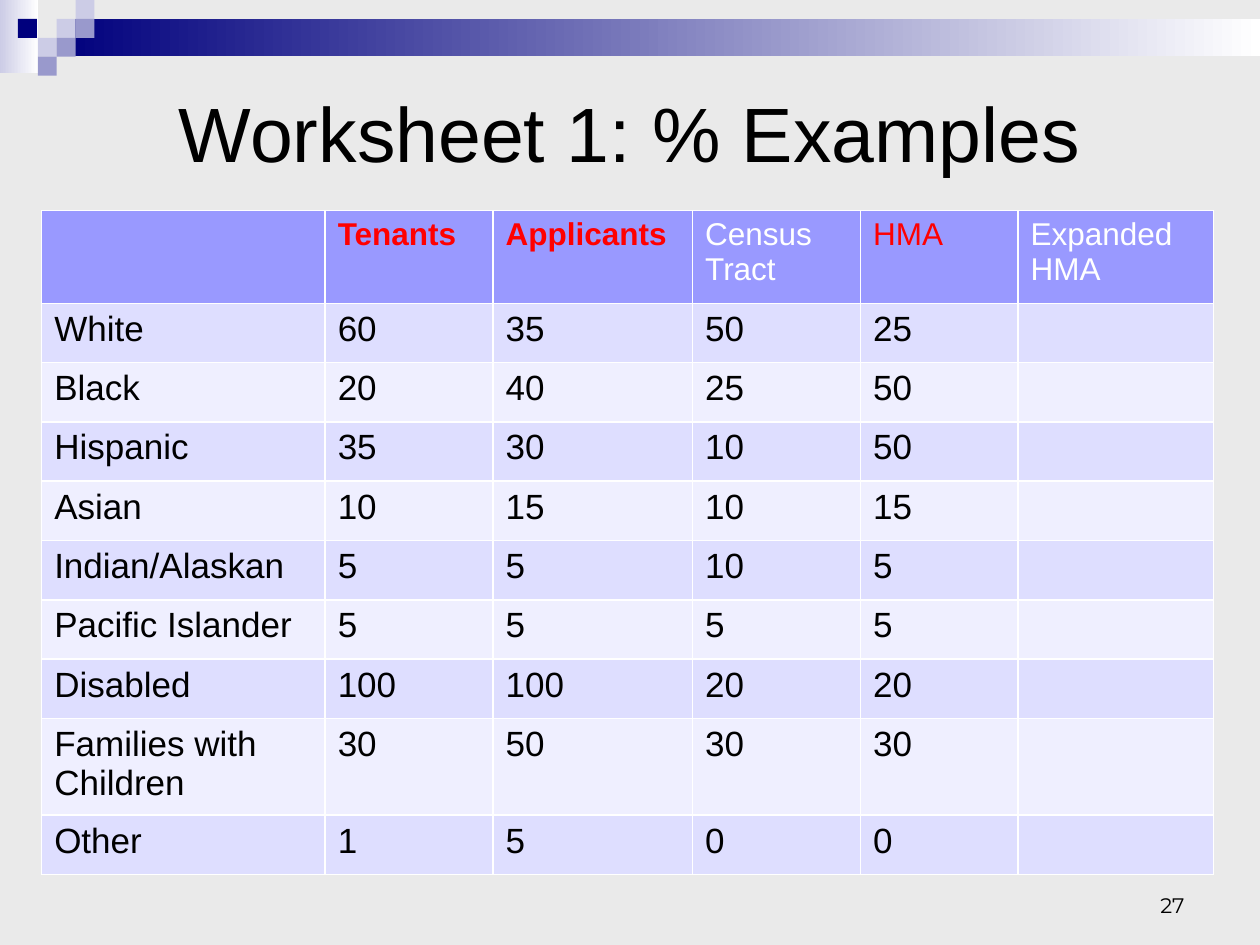
"""Build the worksheet slide with its table of percentage examples."""
from pptx import Presentation
from pptx.dml.color import RGBColor
from pptx.enum.shapes import MSO_SHAPE
from pptx.enum.text import MSO_ANCHOR, PP_ALIGN
from pptx.util import Pt

BLACK = RGBColor(0x00, 0x00, 0x00)
WHITE = RGBColor(0xFF, 0xFF, 0xFF)
RED = RGBColor(0xFF, 0x00, 0x00)
GREY = RGBColor(0xEA, 0xEA, 0xEA)
NAVY = RGBColor(0x00, 0x00, 0x7D)
MAUVE = RGBColor(0x99, 0x99, 0xCC)
PALE = RGBColor(0xCC, 0xCC, 0xE6)
HEAD = RGBColor(0x99, 0x99, 0xFF)
ODD = RGBColor(0xDE, 0xDE, 0xFF)
EVEN = RGBColor(0xEF, 0xEF, 0xFF)


def write(frame, text, size=20, color=BLACK, bold=False, font="Arial",
          align=PP_ALIGN.LEFT, anchor=MSO_ANCHOR.TOP):
    frame.word_wrap = True
    frame.vertical_anchor = anchor
    para = frame.paragraphs[0]
    para.alignment = align
    run = para.add_run()
    run.text = text
    run.font.size = Pt(size)
    run.font.name = font
    run.font.bold = bold
    run.font.color.rgb = color


def block(left, top, width, height, color, fade=False):
    shape = slide.shapes.add_shape(
        MSO_SHAPE.RECTANGLE, Pt(left), Pt(top), Pt(width), Pt(height))
    shape.shadow.inherit = False
    shape.line.fill.background()
    if fade:
        shape.fill.gradient()
        shape.fill.gradient_angle = 0
        for stop, tone in zip(shape.fill.gradient_stops, (color, WHITE)):
            stop.color.rgb = tone
    else:
        shape.fill.solid()
        shape.fill.fore_color.rgb = color


deck = Presentation()
deck.slide_width, deck.slide_height = Pt(720), Pt(540)
slide = deck.slides.add_slide(deck.slide_layouts[6])
slide.background.fill.solid()
slide.background.fill.fore_color.rgb = GREY

block(0, 0, 22, 41.8, PALE, fade=True)
block(32.4, 10.8, 687.6, 21.4, NAVY, fade=True)
UNIT = 10.8
for col, row, color in [(3, 1, PALE), (4, 0, PALE), (4, 1, MAUVE), (2, 2, PALE),
                        (0.95, 1, NAVY), (3, 2, MAUVE), (2, 3, MAUVE)]:
    block(col * UNIT, row * UNIT, UNIT, UNIT, color)

title = slide.shapes.add_textbox(Pt(36), Pt(36), Pt(648), Pt(78))
write(title.text_frame, "Worksheet 1: % Examples", size=44,
      align=PP_ALIGN.CENTER, anchor=MSO_ANCHOR.MIDDLE)

heads = [("", WHITE, False), ("Tenants", RED, True), ("Applicants", RED, True),
         ("Census Tract", WHITE, False), ("HMA", RED, False),
         ("Expanded HMA", WHITE, False)]
groups = [
    ("White", 60, 35, 50, 25),
    ("Black", 20, 40, 25, 50),
    ("Hispanic", 35, 30, 10, 50),
    ("Asian", 10, 15, 10, 15),
    ("Indian/Alaskan", 5, 5, 10, 5),
    ("Pacific Islander", 5, 5, 5, 5),
    ("Disabled", 100, 100, 20, 20),
    ("Families with Children", 30, 50, 30, 30),
    ("Other", 1, 5, 0, 0),
]
widths = [162, 96, 114, 96, 90, 111.6]
TALL, LOW = 53.2, 33.9
heights = [TALL] + [LOW] * 7 + [TALL, LOW]
grid = slide.shapes.add_table(len(heights), len(widths), Pt(23.8), Pt(120.2),
                              Pt(sum(widths)), Pt(sum(heights))).table
for col, width in zip(grid.columns, widths):
    col.width = Pt(width)
for num, (row, height) in enumerate(zip(grid.rows, heights)):
    row.height = Pt(height)
    for cell in row.cells:
        cell.fill.solid()
        cell.fill.fore_color.rgb = HEAD if num == 0 else ODD if num % 2 else EVEN

for col, (text, color, bold) in enumerate(heads):
    if text:
        write(grid.cell(0, col).text_frame, text, size=18, color=color, bold=bold)
for row, group in enumerate(groups, 1):
    for col, value in enumerate(group):
        write(grid.cell(row, col).text_frame, str(value))

page = slide.shapes.add_textbox(Pt(516), Pt(492), Pt(168), Pt(36))
write(page.text_frame, "27", size=12, font="Montserrat",
      align=PP_ALIGN.RIGHT, anchor=MSO_ANCHOR.BOTTOM)

deck.save("out.pptx")
